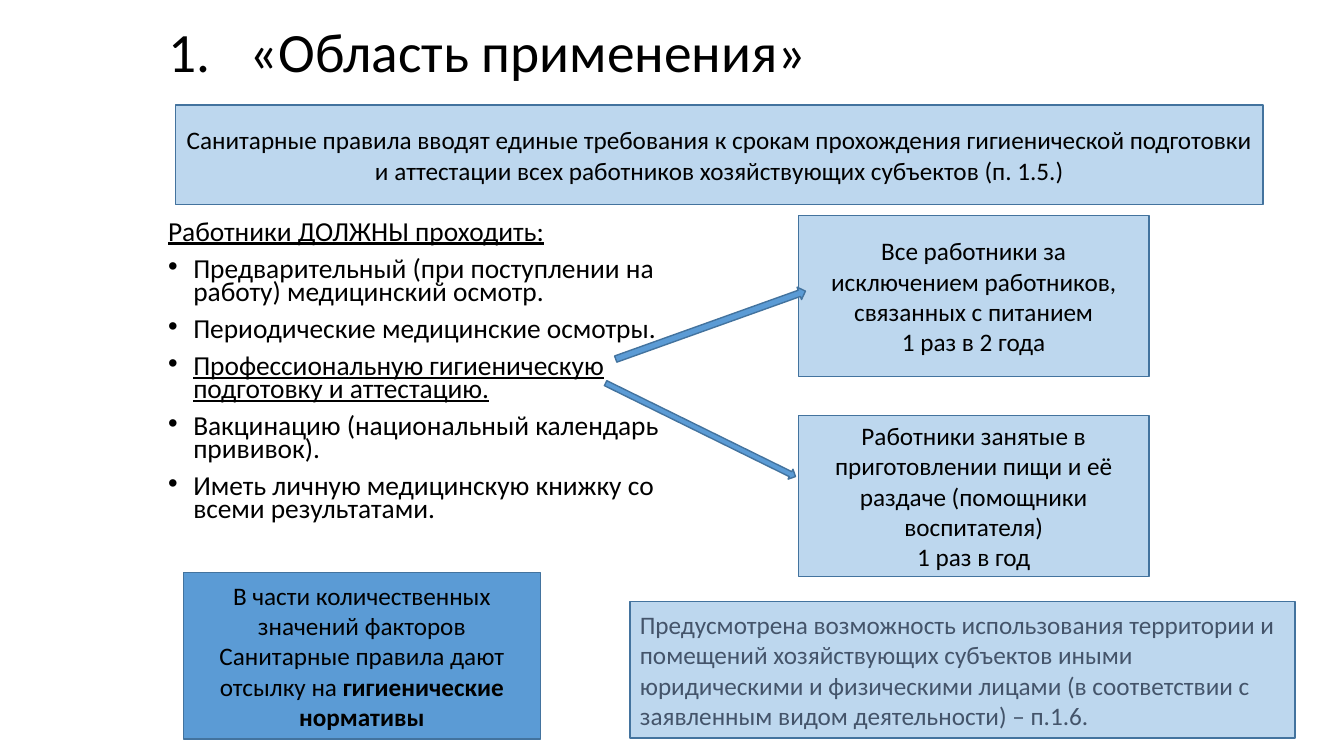
from dataclasses import dataclass

from lxml.etree import SubElement
from pptx import Presentation
from pptx.dml.color import RGBColor
from pptx.enum.shapes import MSO_SHAPE
from pptx.enum.text import MSO_ANCHOR, PP_ALIGN
from pptx.oxml.ns import qn
from pptx.util import Pt


@dataclass(frozen=True)
class Theme:
    font: str = "Calibri"
    ink: str = "000000"
    muted: str = "44546A"
    pale: str = "BDD7EE"
    accent: str = "5B9BD5"
    outline: str = "43739E"
    title_size: float = 39.6
    list_size: float = 19.6
    box_size: float = 18


class SlideBuilder:
    def __init__(self, page, theme):
        self.page = page
        self.theme = theme

    def style_span(self, span, size, color):
        span.font.name = self.theme.font
        span.font.size = Pt(size)
        span.font.color.rgb = RGBColor.from_string(color)

    def mark(self, para, indent, tag, **attributes):
        """Give a paragraph a hanging indent and a bullet or number."""
        properties = para._p.get_or_add_pPr()
        properties.set("marL", str(Pt(indent)))
        properties.set("indent", str(-Pt(indent)))
        SubElement(properties, qn("a:buFont"), typeface="Arial" if tag == "a:buChar" else "+mj-lt")
        SubElement(properties, qn(tag), **attributes)

    def text_box(self, left, top, width, height, anchor):
        box = self.page.shapes.add_textbox(Pt(left), Pt(top), Pt(width), Pt(height))
        box.text_frame.word_wrap = True
        box.text_frame.vertical_anchor = anchor
        return box.text_frame

    def title(self, text, *bounds):
        frame = self.text_box(*bounds, MSO_ANCHOR.MIDDLE)
        frame.text = text
        para = frame.paragraphs[0]
        para.line_spacing = 0.9
        self.style_span(para.runs[0], self.theme.title_size, self.theme.ink)
        self.mark(para, 58.5, "a:buAutoNum", type="arabicPeriod")

    def bullet_list(self, lines, underlined, *bounds):
        """Write a heading line followed by bullets; underlined holds line indexes."""
        frame = self.text_box(*bounds, MSO_ANCHOR.TOP)
        frame.text = "\n".join(lines)
        for index, para in enumerate(frame.paragraphs):
            para.line_spacing = 0.7
            para.space_before = Pt(10)
            span = para.runs[0]
            self.style_span(span, self.theme.list_size, self.theme.ink)
            span.font.underline = index in underlined
            if index:
                self.mark(para, 18, "a:buChar", char="•")

    def shape(self, kind, fill, left, top, width, height):
        shape = self.page.shapes.add_shape(kind, Pt(left), Pt(top), Pt(width), Pt(height))
        shape.shadow.inherit = False
        shape.fill.solid()
        shape.fill.fore_color.rgb = RGBColor.from_string(fill)
        shape.line.color.rgb = RGBColor.from_string(self.theme.outline)
        shape.line.width = Pt(1)
        return shape

    def panel(self, text, *bounds, fill=None, color=None, align=PP_ALIGN.CENTER, bold_end=""):
        frame = self.shape(MSO_SHAPE.RECTANGLE, fill or self.theme.pale, *bounds).text_frame
        frame.word_wrap = True
        frame.vertical_anchor = MSO_ANCHOR.MIDDLE
        frame.text = text
        if bold_end:
            span = frame.paragraphs[-1].add_run()
            span.text = bold_end
            span.font.bold = True
        for para in frame.paragraphs:
            para.alignment = align
            for span in para.runs:
                self.style_span(span, self.theme.box_size, color or self.theme.ink)

    def arrow(self, rotation, *bounds):
        self.shape(MSO_SHAPE.RIGHT_ARROW, self.theme.accent, *bounds).rotation = rotation


def main():
    deck = Presentation()
    deck.slide_width, deck.slide_height = Pt(960), Pt(540)
    theme = Theme()
    builder = SlideBuilder(deck.slides.add_slide(deck.slide_layouts[6]), theme)

    builder.title("«Область применения»", 113, 15.8, 789, 46)
    builder.bullet_list(
        [
            "Работники ДОЛЖНЫ проходить:",
            "Предварительный (при поступлении на работу) медицинский осмотр.",
            "Периодические медицинские осмотры.",
            "Профессиональную гигиеническую подготовку и аттестацию.",
            "Вакцинацию (национальный календарь прививок).",
            "Иметь личную медицинскую книжку со всеми результатами.",
        ],
        {0, 3},
        113, 155.5, 378.7, 246.2,
    )
    builder.panel(
        "Санитарные правила вводят единые требования к срокам прохождения гигиенической "
        "подготовки и аттестации всех работников хозяйствующих субъектов (п. 1.5.)",
        125.3, 75, 777, 71.3,
    )
    frequencies = [
        "Все работники за исключением работников, связанных с питанием\n1 раз в 2 года",
        "Работники занятые в приготовлении пищи и её раздаче (помощники воспитателя)\n1 раз в год",
    ]
    for index, text in enumerate(frequencies):
        builder.panel(text, 570.2, 154 + 142.8 * index, 250.6, 115)
    builder.panel(
        "В части количественных значений факторов Санитарные правила дают отсылку на ",
        131, 409, 255, 118.8,
        fill=theme.accent, bold_end="гигиенические нормативы",
    )
    builder.arrow(340.3, 435.6, 227.5, 144, 9.4)
    builder.arrow(26.2, 424.8, 303.1, 151.2, 7.9)
    builder.panel(
        "Предусмотрена возможность использования территории и помещений хозяйствующих "
        "субъектов иными юридическими и физическими лицами (в соответствии с заявленным "
        "видом деятельности) – п.1.6.",
        450, 429.8, 475.2, 97.5,
        color=theme.muted, align=PP_ALIGN.LEFT,
    )
    deck.save("out.pptx")


if __name__ == "__main__":
    main()
